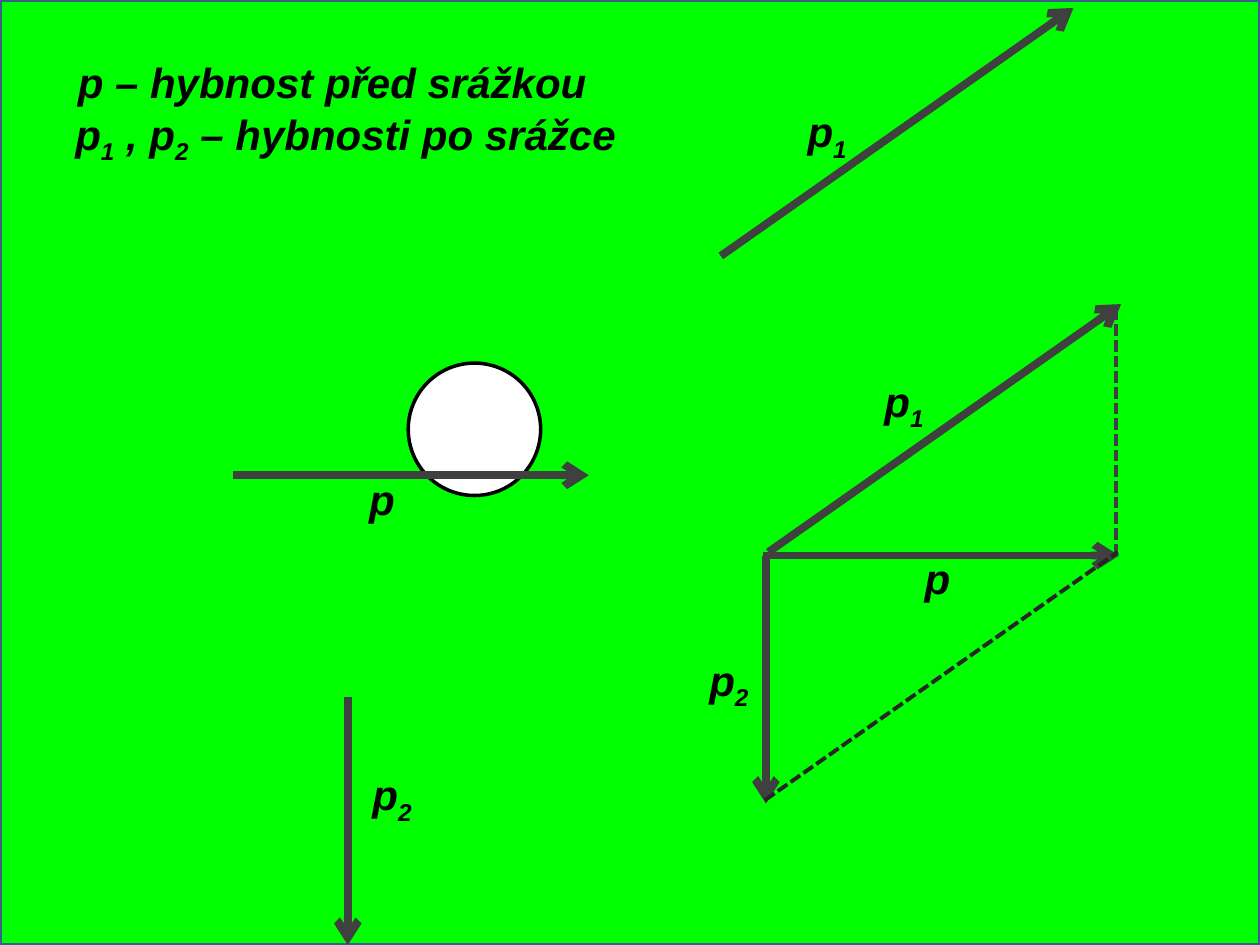
"""Build a slide showing momentum vectors before and after a collision."""
from lxml import etree
from pptx import Presentation
from pptx.dml.color import RGBColor
from pptx.enum import dml, shapes, text
from pptx.oxml.ns import qn
from pptx.util import Cm, Pt

THEME = {
    "font": "Arial", "size": 24, "ink": "000000", "ball": "FFFFFF",
    "field": "00FF00", "edge": "3A5F8C", "vector": "404040", "guide": "262626",
    "outline": 2, "arrow": 4.5, "dash": 2.25,
}
SLIDE = (25.4, 19.05)
BALL = (8.23, 7.32, 2.67, 2.67)
VECTORS = {"p": (7.17, 0), "p1": (7.11, -5), "p2": (0, 5)}
LABELS = {"p": ("p",), "p1": ("p", "1"), "p2": ("p", "2")}
CAPTIONS = [
    ((1.32, 1.02), ("p – hybnost před srážkou",)),
    ((1.27, 2.06), ("p", "1", " , p", "2", " – hybnosti po srážce")),
]
CAPTION_WIDTH, TEXT_HEIGHT = 11.79, 1.27
DIAGRAMS = [
    {"width": 6.17,
     "arrows": [("p", (4.7, 9.58))],
     "labels": [("p", (7.19, 9.42))]},
    {"width": 6.17,
     "arrows": [("p2", (7.01, 14.05)), ("p1", (14.53, 5.16))],
     "labels": [("p2", (7.26, 15.37)), ("p1", (16.03, 2.01))]},
    {"width": 3.48,
     "arrows": [("p1", (15.49, 11.13)), ("p", (15.39, 11.2)), ("p2", (15.44, 11.2))],
     "guides": [("p2", (22.5, 6.22), "vector"), ("p1", (15.42, 16.13), "guide")],
     "labels": [("p", (18.39, 11.02)), ("p2", (14.05, 13.06)), ("p1", (17.58, 7.44))]},
]


def color(name):
    return RGBColor.from_string(THEME[name])


def add_block(s, kind, box, fill, line):
    sp = s.shapes.add_shape(kind, *map(Cm, box))
    sp.shadow.inherit = False
    sp.fill.solid()
    sp.fill.fore_color.rgb = color(fill)
    sp.line.color.rgb = color(line)
    sp.line.width = Pt(THEME["outline"])


def add_vector(parent, name, start, ink="vector", dashed=False):
    (x, y), (dx, dy) = start, VECTORS[name]
    ends = map(Cm, (x, y, x + dx, y + dy))
    sp = parent.shapes.add_connector(shapes.MSO_CONNECTOR.STRAIGHT, *ends)
    sp.line.color.rgb = color(ink)
    sp.line.width = Pt(THEME["dash" if dashed else "arrow"])
    if dashed:
        sp.line.dash_style = dml.MSO_LINE.SQUARE_DOT
    else:
        etree.SubElement(sp.line._get_or_add_ln(), qn("a:tailEnd"), type="arrow")
    etree.SubElement(sp._element.spPr, qn("a:effectLst"))


def add_text(parent, runs, at, width, size=THEME["size"], ink="ink"):
    sp = parent.shapes.add_textbox(*map(Cm, (*at, width, TEXT_HEIGHT)))
    tf = sp.text_frame
    tf.word_wrap = True
    tf.auto_size = text.MSO_AUTO_SIZE.SHAPE_TO_FIT_TEXT
    p = tf.paragraphs[0]
    for i, words in enumerate(runs):
        r = p.add_run()
        r.text = words
        r.font.name, r.font.size = THEME["font"], Pt(size)
        r.font.bold = r.font.italic = True
        r.font.color.rgb = color(ink)
        if i % 2:
            r.font._element.set("baseline", "-25000")


def main():
    prs = Presentation()
    prs.slide_width, prs.slide_height = map(Cm, SLIDE)
    s = prs.slides.add_slide(prs.slide_layouts[6])
    add_block(s, shapes.MSO_SHAPE.RECTANGLE, (0, 0, *SLIDE), "field", "edge")
    add_block(s, shapes.MSO_SHAPE.OVAL, BALL, "ball", "ink")
    for at, runs in CAPTIONS:
        add_text(s, runs, at, CAPTION_WIDTH)
    for diagram in DIAGRAMS:
        group = s.shapes.add_group_shape()
        for name, start in diagram["arrows"]:
            add_vector(group, name, start)
        for name, start, ink in diagram.get("guides", []):
            add_vector(group, name, start, ink, dashed=True)
        for name, at in diagram["labels"]:
            add_text(group, LABELS[name], at, diagram["width"])
    prs.save("out.pptx")


if __name__ == "__main__":
    main()
